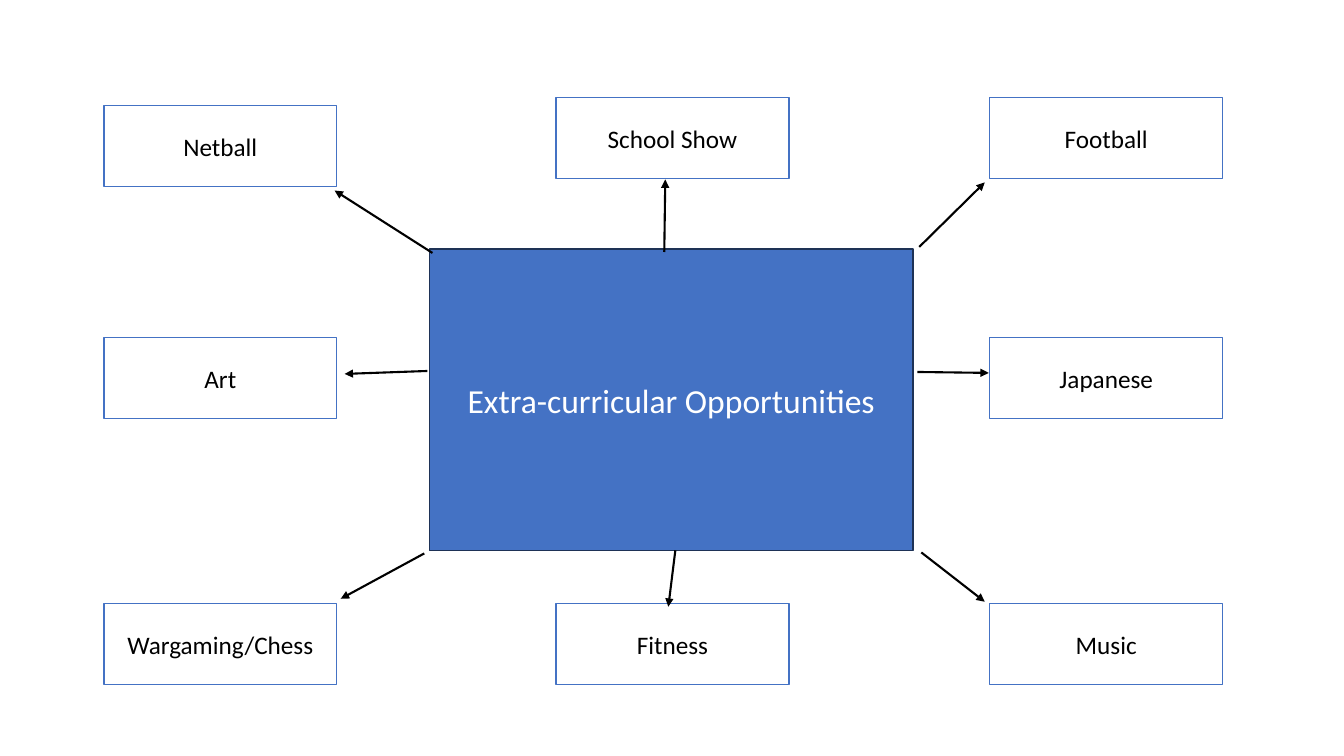
from pptx import Presentation
from pptx.dml.color import RGBColor
from pptx.enum import dml, shapes, text
from pptx.oxml.ns import qn
from pptx.util import Pt
from lxml import etree

# Content: label, box left and top, arrow start and end (points)
HUB = "Extra-curricular Opportunities"
LEFT, MIDDLE, RIGHT = 74.2, 397.2, 707
TOP, CENTRE, BOTTOM = 69.8, 241.2, 431.3
ACTIVITIES = [
    ("Netball", LEFT, 75.6, (308.9, 180.7), (239, 136.1)),
    ("Art", LEFT, CENTRE, (305.3, 265), (246.2, 267.1)),
    ("Wargaming/Chess", LEFT, BOTTOM, (303.1, 395.3), (243.4, 427.7)),
    ("Fitness", MIDDLE, BOTTOM, (482.4, 393.1), (477.4, 433.4)),
    ("Music", RIGHT, BOTTOM, (658.1, 394.6), (703.4, 429.8)),
    ("Japanese", RIGHT, CENTRE, (655.2, 265.7), (706.3, 266.4)),
    ("Football", RIGHT, TOP, (656.6, 176.4), (703.4, 130.3)),
    ("School Show", MIDDLE, TOP, (474.5, 180), (475.2, 128.2)),
]
HUB_BOX = (306.7, 177.8, 345.6, 215.3)
BOX_W, BOX_H = 166.3, 57.6

FONT = "Calibri"
BLUE = RGBColor(0x44, 0x72, 0xC4)
NAVY = RGBColor(0x1E, 0x32, 0x56)
WHITE = RGBColor(0xFF, 0xFF, 0xFF)
BLACK = RGBColor(0x00, 0x00, 0x00)


def style_box(sp, label, fill, line, color, size):
    sp.fill.solid()
    sp.fill.fore_color.rgb = fill
    sp.line.color.rgb = line
    sp.line.width = Pt(1)
    tf = sp.text_frame
    tf.text = label
    tf.word_wrap = True
    tf.auto_size = text.MSO_AUTO_SIZE.NONE
    tf.vertical_anchor = text.MSO_ANCHOR.MIDDLE
    p = tf.paragraphs[0]
    p.alignment = text.PP_ALIGN.CENTER
    font = p.runs[0].font
    font.name, font.size, font.color.rgb = FONT, Pt(size), color


def add_arrow(slide, start, end):
    cx = slide.shapes.add_connector(
        shapes.MSO_CONNECTOR.STRAIGHT, *map(Pt, start + end))
    cx.line.color.rgb = BLACK
    cx.line.width = Pt(1.5)
    ln = cx.line._get_or_add_ln()
    etree.SubElement(ln, qn("a:tailEnd"), type="triangle")
    etree.SubElement(ln.getparent(), qn("a:effectLst"))


def main():
    prs = Presentation()
    prs.slide_width, prs.slide_height = Pt(960), Pt(540)
    slide = prs.slides.add_slide(prs.slide_layouts[5])

    # Central topic
    hub = slide.shapes.title
    hub.left, hub.top, hub.width, hub.height = map(Pt, HUB_BOX)
    style_box(hub, HUB, BLUE, NAVY, WHITE, 24)

    # Activity boxes
    for label, left, top, _, _ in ACTIVITIES:
        sp = slide.shapes.add_shape(
            shapes.MSO_SHAPE.RECTANGLE, *map(Pt, (left, top, BOX_W, BOX_H)))
        sp.shadow.inherit = False
        style_box(sp, label, WHITE, BLUE, BLACK, 18)

    # Arrows from the topic to each activity
    for _, _, _, start, end in ACTIVITIES:
        add_arrow(slide, start, end)

    prs.save("out.pptx")


if __name__ == "__main__":
    main()
